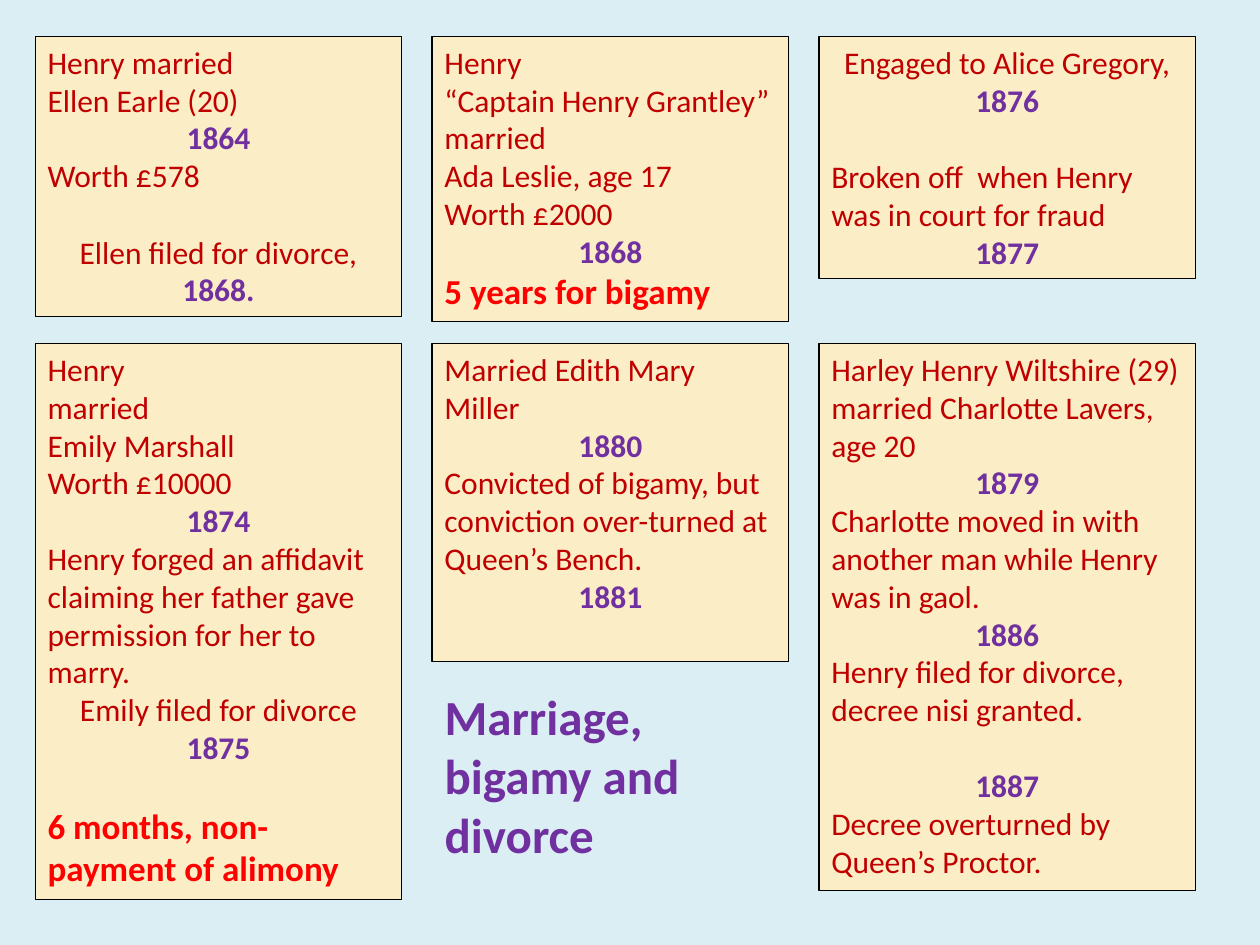
import pptx
import pptx.dml.color
import pptx.enum.shapes
import pptx.enum.text
import pptx.util

Cm = pptx.util.Cm
Pt = pptx.util.Pt
RGBColor = pptx.dml.color.RGBColor
PP_ALIGN = pptx.enum.text.PP_ALIGN

PALE_BLUE = RGBColor(0xDB, 0xEE, 0xF4)
CREAM = RGBColor(0xFB, 0xED, 0xC5)
BLACK = RGBColor(0x00, 0x00, 0x00)
DARK_RED = RGBColor(0xC0, 0x00, 0x00)
RED = RGBColor(0xFF, 0x00, 0x00)
PURPLE = RGBColor(0x70, 0x30, 0xA0)

BLANK_LINE = Pt(22)
LEFTS = [Cm(0.71), Cm(8.71), Cm(16.51)]
WIDTHS = [Cm(7.39), Cm(7.19), Cm(7.59)]
TOPS = [Cm(0.74), Cm(6.93)]

YEAR = {"color": PURPLE, "bold": True, "align": PP_ALIGN.CENTER}
VERDICT = {"color": RED, "bold": True, "size": 20}
CENTRED = {"align": PP_ALIGN.CENTER}
GAP = {"before": BLANK_LINE}
JOINED = {"color": PURPLE, "bold": True, "joined": True}

MARRIAGES = [
    (0, 0, 5.64, [
        ("Henry married", {}),
        ("Ellen Earle (20)", {}),
        ("1864", YEAR),
        ("Worth £578", {}),
        ("Ellen filed for divorce, ", CENTRED | GAP),
        ("1868.", JOINED),
    ]),
    (1, 0, 5.74, [
        ("Henry", {}),
        ("“Captain Henry Grantley”", {}),
        ("married", {}),
        ("Ada Leslie, age 17", {}),
        ("Worth £2000", {}),
        ("1868", YEAR),
        ("5 years for bigamy", VERDICT),
    ]),
    (2, 0, 4.88, [
        ("Engaged to Alice Gregory, ", CENTRED),
        ("1876", JOINED),
        ("Broken off  when Henry was in court for fraud", GAP),
        ("1877", YEAR),
    ]),
    (0, 1, 11.2, [
        ("Henry", {}),
        ("married", {}),
        ("Emily Marshall", {}),
        ("Worth £10000", {}),
        ("1874", YEAR),
        ("Henry forged an affidavit claiming her father gave permission "
         "for her to marry.", {}),
        ("Emily filed for divorce ", CENTRED),
        ("1875", JOINED),
        ("6 months, non-payment of alimony", VERDICT | GAP),
    ]),
    (1, 1, 6.4, [
        ("Married Edith Mary Miller", {}),
        ("1880", YEAR),
        ("Convicted of bigamy, but conviction over-turned at Queen’s Bench.", {}),
        ("1881", YEAR),
    ]),
    (2, 1, 11.02, [
        ("Harley Henry Wiltshire (29) married Charlotte Lavers, age 20", {}),
        ("1879", YEAR),
        ("Charlotte moved in with another man while Henry was in gaol.", {}),
        ("1886", YEAR),
        ("Henry filed for divorce, decree nisi granted.", {}),
        ("1887", YEAR | GAP),
        ("Decree overturned by Queen’s Proctor.", {}),
    ]),
]


def write(frame, text, size=18, color=DARK_RED, bold=False,
          align=PP_ALIGN.LEFT, before=Pt(0), joined=False):
    paragraph = frame.paragraphs[-1]
    if not joined:
        if paragraph.runs:
            paragraph = frame.add_paragraph()
        paragraph.alignment = align
        paragraph.space_before = before
        paragraph.line_spacing = 1.0
    run = paragraph.add_run()
    run.text = text
    run.font.name = "Calibri"
    run.font.size = Pt(size)
    run.font.bold = bold
    run.font.color.rgb = color


deck = pptx.Presentation()
deck.slide_width = Cm(25.4)
deck.slide_height = Cm(19.05)
slide = deck.slides.add_slide(deck.slide_layouts[5])
slide.background.fill.solid()
slide.background.fill.fore_color.rgb = PALE_BLUE

heading = slide.shapes.title
heading.left, heading.top = LEFTS[1], Cm(13.72)
heading.width, heading.height = WIDTHS[1], Cm(3.84)
heading.text_frame.word_wrap = True
heading.text_frame.auto_size = pptx.enum.text.MSO_AUTO_SIZE.NONE
heading.text_frame.vertical_anchor = pptx.enum.text.MSO_ANCHOR.TOP
write(heading.text_frame, "Marriage, bigamy and divorce", size=28, color=PURPLE, bold=True)

for column, row, height, story in MARRIAGES:
    card = slide.shapes.add_shape(
        pptx.enum.shapes.MSO_SHAPE.RECTANGLE,
        LEFTS[column], TOPS[row], WIDTHS[column], Cm(height))
    card.shadow.inherit = False
    card.fill.solid()
    card.fill.fore_color.rgb = CREAM
    card.line.color.rgb = BLACK
    card.line.width = Pt(0.75)
    card.text_frame.word_wrap = True
    card.text_frame.vertical_anchor = pptx.enum.text.MSO_ANCHOR.TOP
    for text, style in story:
        write(card.text_frame, text, **style)

deck.save("out.pptx")
